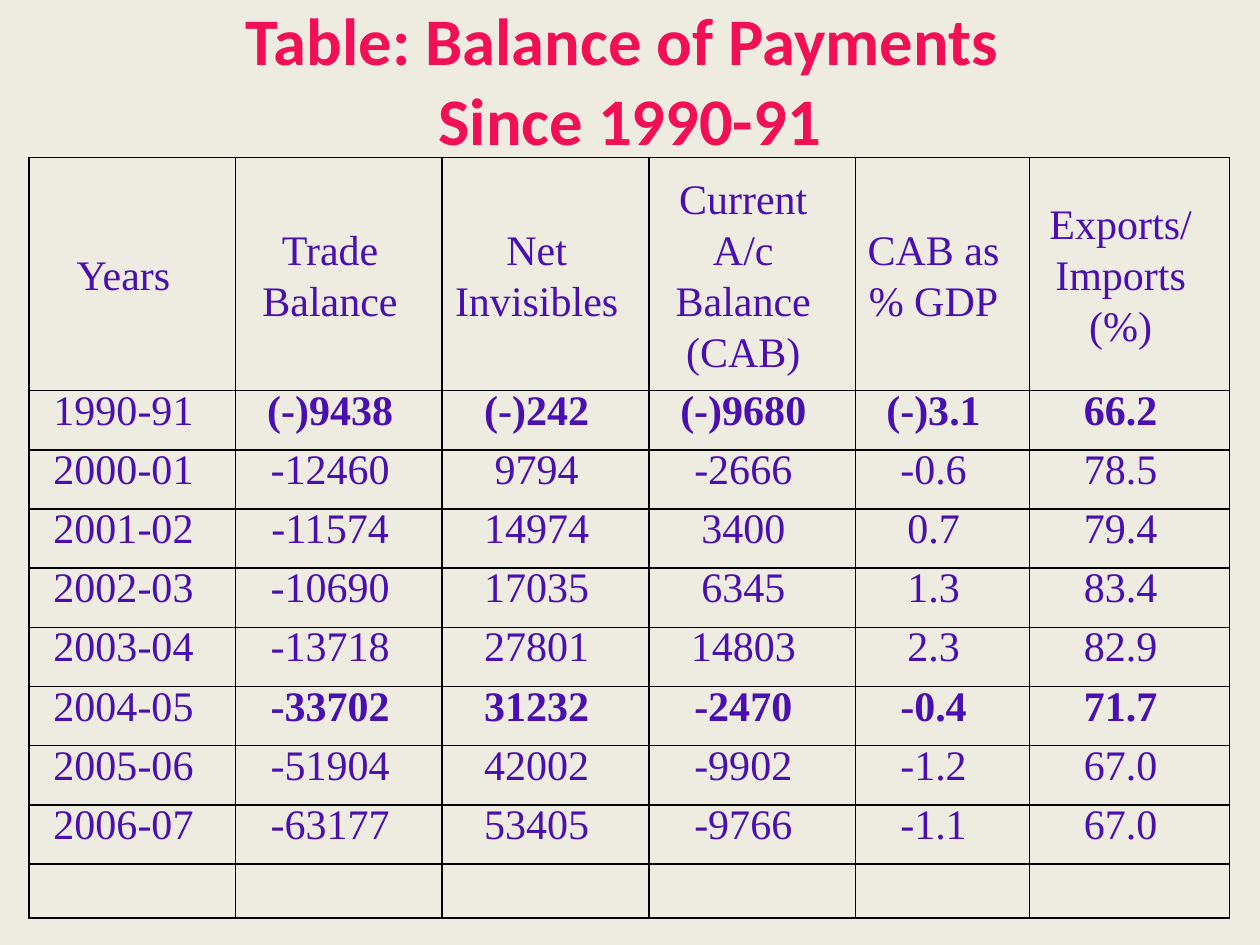
from lxml import etree
from pptx import Presentation
from pptx.dml.color import RGBColor
from pptx.enum.text import MSO_ANCHOR, PP_ALIGN
from pptx.oxml.ns import qn
from pptx.util import Inches, Pt

CENTER = PP_ALIGN.CENTER
MIDDLE = MSO_ANCHOR.MIDDLE

COLORS = {
    "background": "EEECE1",
    "title": "F10F55",
    "text": "490FB1",
    "border": "000000",
}

COLUMN_WIDTHS = [1.64] * 4 + [1.38, 1.59]
ROW_HEIGHTS = [1.85] + [0.47] * 8 + [0.43]
HEADINGS = [
    "Years", "Trade Balance", "Net Invisibles",
    "Current A/c Balance (CAB)", "CAB as % GDP", "Exports/\nImports (%)",
]
BALANCES = [
    ["1990-91", "(-)9438", "(-)242", "(-)9680", "(-)3.1", "66.2"],
    ["2000-01", "-12460", "9794", "-2666", "-0.6", "78.5"],
    ["2001-02", "-11574", "14974", "3400", "0.7", "79.4"],
    ["2002-03", "-10690", "17035", "6345", "1.3", "83.4"],
    ["2003-04", "-13718", "27801", "14803", "2.3", "82.9"],
    ["2004-05", "-33702", "31232", "-2470", "-0.4", "71.7"],
    ["2005-06", "-51904", "42002", "-9902", "-1.2", "67.0"],
    ["2006-07", "-63177", "53405", "-9766", "-1.1", "67.0"],
]
BOLD_YEARS = {"1990-91", "2004-05"}


def format_text(frame, font_name, size, color, bold=False, spacing=None):
    for paragraph in frame.paragraphs:
        paragraph.alignment = CENTER
        paragraph.line_spacing = spacing
        for span in paragraph.runs:
            span.font.name = font_name
            span.font.size = Pt(size)
            span.font.bold = bold
            span.font.color.rgb = RGBColor.from_string(COLORS[color])


def add_title(page, text):
    box = page.shapes.add_textbox(Inches(0.5), Inches(0.08), Inches(9), Inches(1.09))
    frame = box.text_frame
    frame.word_wrap = True
    frame.vertical_anchor = MIDDLE
    frame.paragraphs[0].text = text
    format_text(frame, "Calibri", 38, "title", bold=True)


def set_borders(cell):
    properties = cell._tc.get_or_add_tcPr()
    for position, side in enumerate(("lnL", "lnR", "lnT", "lnB")):
        line = etree.Element(qn(f"a:{side}"), w=str(Pt(1)))
        fill = etree.SubElement(line, qn("a:solidFill"))
        etree.SubElement(fill, qn("a:srgbClr"), val=COLORS["border"])
        properties.insert(position, line)


def fill_cell(cell, text, bold, spacing):
    cell.fill.background()
    set_borders(cell)
    cell.vertical_anchor = MIDDLE
    cell.margin_left = Inches(0.07)
    cell.margin_right = Inches(0.21)  # text sits slightly left of centre
    cell.margin_top = cell.margin_bottom = 0
    if text:
        cell.text_frame.text = text
        format_text(cell.text_frame, "Times New Roman", 24, "text", bold, spacing)


def add_balance_table(page):
    rows = [HEADINGS] + BALANCES + [[""] * len(HEADINGS)]
    table = page.shapes.add_table(
        len(rows), len(HEADINGS), Inches(0.23), Inches(1.25),
        Inches(sum(COLUMN_WIDTHS)), Inches(sum(ROW_HEIGHTS)),
    ).table
    table.first_row = False
    table.horz_banding = False
    for column, width in zip(table.columns, COLUMN_WIDTHS):
        column.width = Inches(width)
    for row, height in zip(table.rows, ROW_HEIGHTS):
        row.height = Inches(height)

    for row_index, values in enumerate(rows):
        spacing = Pt(16) if row_index else 1.1
        for column_index, text in enumerate(values):
            bold = column_index > 0 and values[0] in BOLD_YEARS
            fill_cell(table.cell(row_index, column_index), text, bold, spacing)


def main():
    deck = Presentation()
    deck.slide_width, deck.slide_height = Inches(10), Inches(7.5)
    page = deck.slides.add_slide(deck.slide_layouts[6])

    # Background
    page.background.fill.solid()
    page.background.fill.fore_color.rgb = RGBColor.from_string(COLORS["background"])

    # Title and table
    add_title(page, "Table: Balance of Payments \vSince 1990-91")
    add_balance_table(page)

    deck.save("out.pptx")


if __name__ == "__main__":
    main()
